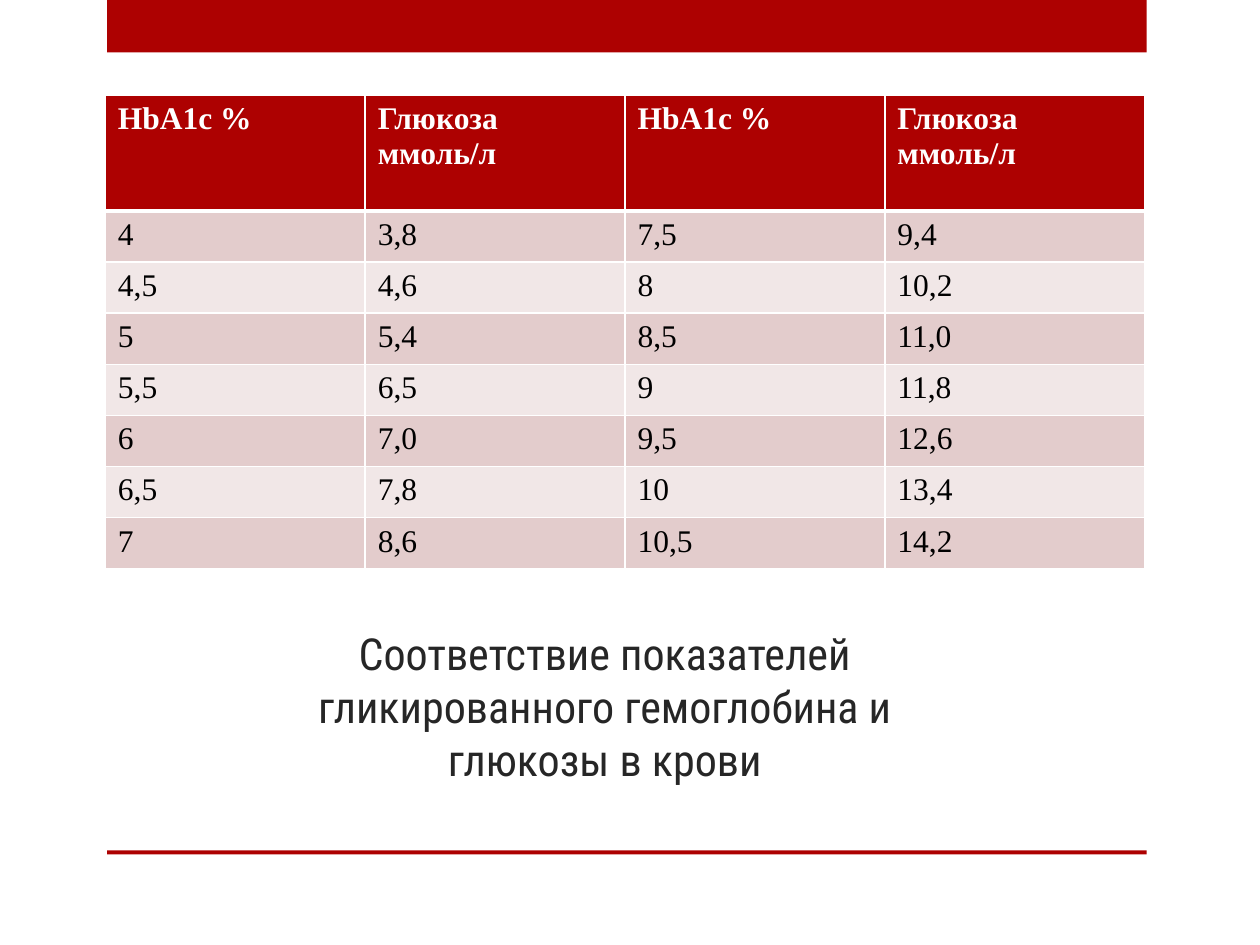
from dataclasses import dataclass

from lxml.etree import SubElement
from pptx import Presentation
from pptx.dml.color import RGBColor
from pptx.enum.shapes import MSO_SHAPE as Shape
from pptx.enum.text import MSO_ANCHOR as Anchor, PP_ALIGN as Align
from pptx.oxml.ns import qn
from pptx.util import Pt

COLORS = {
    "red": "AD0101",
    "white": "FFFFFF",
    "black": "000000",
    "title": "262626",
    "band_dark": "E3CCCC",
    "band_light": "F1E7E7",
}
HEADER = ["HbA1c %", "Глюкоза ммоль/л"] * 2
VALUES = [
    ["4", "3,8", "7,5", "9,4"],
    ["4,5", "4,6", "8", "10,2"],
    ["5", "5,4", "8,5", "11,0"],
    ["5,5", "6,5", "9", "11,8"],
    ["6", "7,0", "9,5", "12,6"],
    ["6,5", "7,8", "10", "13,4"],
    ["7", "8,6", "10,5", "14,2"],
]
COL_WIDTH, HEADER_HEIGHT, ROW_HEIGHT = 148.5, 66.4, 29.2


@dataclass
class Box:
    left: float
    top: float
    width: float
    height: float

    def points(self) -> list:
        return [Pt(v) for v in (self.left, self.top, self.width, self.height)]


BARS = [Box(61.2, 0, 594, 30), Box(61.2, 486, 594, 2.2)]
TITLE = Box(139, 378, 413.3, 74.2)
TABLE = Box(60.2, 54.2, 4 * COL_WIDTH, HEADER_HEIGHT + len(VALUES) * ROW_HEIGHT)


def rgb(name: str) -> RGBColor:
    return RGBColor.from_string(COLORS[name])


def write(tf, text: str, *, font: str, size: float, color: str,
          bold: bool = False, align=Align.LEFT) -> None:
    p = tf.paragraphs[0]
    p.alignment = align
    r = p.add_run()
    r.text = text
    r.font.name, r.font.size, r.font.bold = font, Pt(size), bold
    r.font.color.rgb = rgb(color)


def add_bar(s, box: Box) -> None:
    sp = s.shapes.add_shape(Shape.RECTANGLE, *box.points())
    sp.shadow.inherit = False
    sp.fill.solid()
    sp.fill.fore_color.rgb = rgb("red")
    sp.line.fill.background()


def add_title(s, box: Box, text: str) -> None:
    tf = s.shapes.add_textbox(*box.points()).text_frame
    tf.word_wrap = True
    tf.vertical_anchor = Anchor.BOTTOM
    write(tf, text, font="Roboto Condensed", size=25.2, color="title",
          align=Align.CENTER)


def set_borders(cell, **widths: float) -> None:
    tc_pr = cell._tc.get_or_add_tcPr()
    for side in "LRTB":
        ln = SubElement(tc_pr, qn(f"a:ln{side}"), w=str(Pt(widths.get(side, 1))))
        fill = SubElement(ln, qn("a:solidFill"))
        SubElement(fill, qn("a:srgbClr"), val=COLORS["white"])


def add_table(s, box: Box, rows: list[list[str]]) -> None:
    table = s.shapes.add_table(len(rows), len(rows[0]), *box.points()).table
    for col in table.columns:
        col.width = Pt(COL_WIDTH)
    for i, values in enumerate(rows):
        head = i == 0
        table.rows[i].height = Pt(HEADER_HEIGHT if head else ROW_HEIGHT)
        band = "red" if head else "band_dark" if i % 2 else "band_light"
        for j, value in enumerate(values):
            cell = table.cell(i, j)
            set_borders(cell, T=3 if i == 1 else 1, B=3 if head else 1)
            cell.fill.solid()
            cell.fill.fore_color.rgb = rgb(band)
            write(cell.text_frame, value, font="Times New Roman", size=18,
                  color="white" if head else "black", bold=head)


def main() -> None:
    """Build the slide relating glycated haemoglobin to blood glucose."""
    prs = Presentation()
    prs.slide_width, prs.slide_height = Pt(720), Pt(540)
    s = prs.slides.add_slide(prs.slide_layouts[6])
    for bar in BARS:
        add_bar(s, bar)
    add_title(s, TITLE,
              "Соответствие показателей гликированного гемоглобина и глюкозы в крови")
    add_table(s, TABLE, [HEADER, *VALUES])
    prs.save("out.pptx")


if __name__ == "__main__":
    main()
